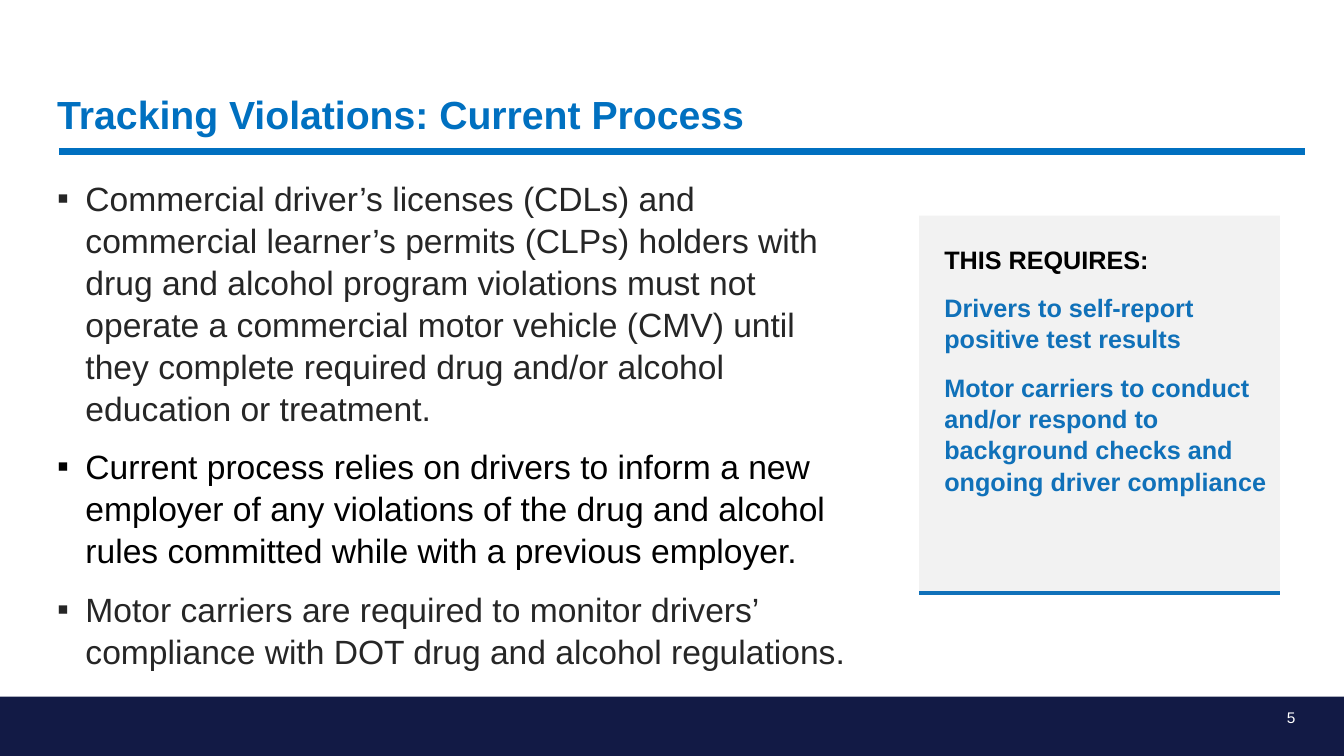
from pptx import Presentation
from pptx.dml.color import RGBColor
from pptx.enum import shapes, text
from pptx.oxml.ns import qn
from pptx.util import Pt
from lxml import etree

# Colours
TITLE_BLUE = RGBColor(0x00, 0x70, 0xC0)
PANEL_BLUE = RGBColor(0x10, 0x71, 0xB9)
NAVY = RGBColor(0x12, 0x1A, 0x45)
PALE_GREY = RGBColor(0xF2, 0xF2, 0xF2)
DARK_GREY = RGBColor(0x26, 0x26, 0x26)
BLACK = RGBColor(0, 0, 0)
WHITE = RGBColor(0xFF, 0xFF, 0xFF)

# Content: (text, colour)
TITLE = [("Tracking Violations: Current Process", TITLE_BLUE)]
BULLETS = [
    ("Commercial driver’s licenses (CDLs) and commercial learner’s permits "
     "(CLPs) holders with drug and alcohol program violations must not operate "
     "a commercial motor vehicle (CMV) until they complete required drug and/or "
     "alcohol education or treatment.", DARK_GREY),
    ("Current process relies on drivers to inform a new employer of any "
     "violations of the drug and alcohol rules committed while with a previous "
     "employer.", BLACK),
    ("Motor carriers are required to monitor drivers’ compliance with DOT drug "
     "and alcohol regulations.", DARK_GREY),
]
REQUIREMENTS = [
    ("THIS REQUIRES:", BLACK),
    ("Drivers to self-report positive test results", PANEL_BLUE),
    ("Motor carriers to conduct and/or respond to background checks and "
     "ongoing driver compliance", PANEL_BLUE),
]
PAGE_NUMBER = [("5", WHITE)]

# Layout in points: left, top, width, height
SLIDE_WIDTH, SLIDE_HEIGHT = 960, 540
FOOTER_TOP = 497.5
FOOTER = (0, FOOTER_TOP, SLIDE_WIDTH, SLIDE_HEIGHT - FOOTER_TOP)
TITLE_BOX = (33.8, 62.6, 898, 39)
BULLET_BOX = (33.8, 122.4, 581, 376)
NUMBER_BOX = (697, 498.3, 235.4, 28.8)
PANEL = (656.6, 154.1, 257.6, 270)
PANEL_INSETS = {"margin_left": 18, "margin_top": 19.4,
                "margin_right": 7.2, "margin_bottom": 3.6}
BULLET_INDENT = 20.2

presentation = Presentation()
presentation.slide_width, presentation.slide_height = Pt(SLIDE_WIDTH), Pt(SLIDE_HEIGHT)
slide = presentation.slides.add_slide(presentation.slide_layouts[6])


def set_attributes(target, values):
    for name, value in values.items():
        setattr(target, name, value)


def add_rectangle(box, colour):
    shape = slide.shapes.add_shape(shapes.MSO_SHAPE.RECTANGLE, *map(Pt, box))
    shape.shadow.inherit = False
    shape.fill.solid()
    shape.fill.fore_color.rgb = colour
    shape.line.fill.background()
    return shape


def add_rule(left, right, y, colour, width):
    rule = slide.shapes.add_connector(
        shapes.MSO_CONNECTOR.STRAIGHT, Pt(left), Pt(y), Pt(right), Pt(y))
    rule.line.color.rgb = colour
    rule.line.width = Pt(width)
    etree.SubElement(rule._element.spPr, qn("a:effectLst"))


def add_bullet(paragraph):
    properties = paragraph._p.get_or_add_pPr()
    properties.set("marL", str(Pt(BULLET_INDENT)))
    properties.set("indent", str(-Pt(BULLET_INDENT)))
    etree.SubElement(properties, qn("a:buFont")).set("typeface", "Arial")
    etree.SubElement(properties, qn("a:buChar")).set("char", "▪")


def write(shape, lines, size, bold=False, bullets=False, anchor=text.MSO_ANCHOR.TOP,
          alignment=text.PP_ALIGN.LEFT, spacing=1.04):
    frame = shape.text_frame
    set_attributes(frame, {"word_wrap": True, "vertical_anchor": anchor})
    for index, (words, colour) in enumerate(lines):
        paragraph = frame.add_paragraph() if index else frame.paragraphs[0]
        if bullets:
            add_bullet(paragraph)
        set_attributes(paragraph, {"alignment": alignment, "line_spacing": spacing,
                                   "space_before": Pt(12 if index else 0)})
        run = paragraph.add_run()
        run.text = words
        set_attributes(run.font, {"name": "Arial", "size": Pt(size), "bold": bold})
        run.font.color.rgb = colour


def add_text(box, lines, size, **style):
    write(slide.shapes.add_textbox(*map(Pt, box)), lines, size, **style)


# Footer band and title rule
add_rectangle(FOOTER, NAVY)
add_rule(42, 932, 108, TITLE_BLUE, 5)

# Title, bullets and page number
add_text(TITLE_BOX, TITLE, 28, bold=True, anchor=text.MSO_ANCHOR.BOTTOM, spacing=1.0)
add_text(BULLET_BOX, BULLETS, 24, bullets=True)
add_text(NUMBER_BOX, PAGE_NUMBER, 11, anchor=text.MSO_ANCHOR.MIDDLE,
         alignment=text.PP_ALIGN.RIGHT, spacing=1.0)

# Requirements panel with its bottom rule
panel = add_rectangle(PANEL, PALE_GREY)
set_attributes(panel.text_frame, {side: Pt(inset) for side, inset in PANEL_INSETS.items()})
write(panel, REQUIREMENTS, 18, bold=True)
panel_left, panel_top, panel_width, panel_height = PANEL
add_rule(panel_left, panel_left + panel_width, panel_top + panel_height - 0.6,
         PANEL_BLUE, 3.25)

presentation.save("out.pptx")
